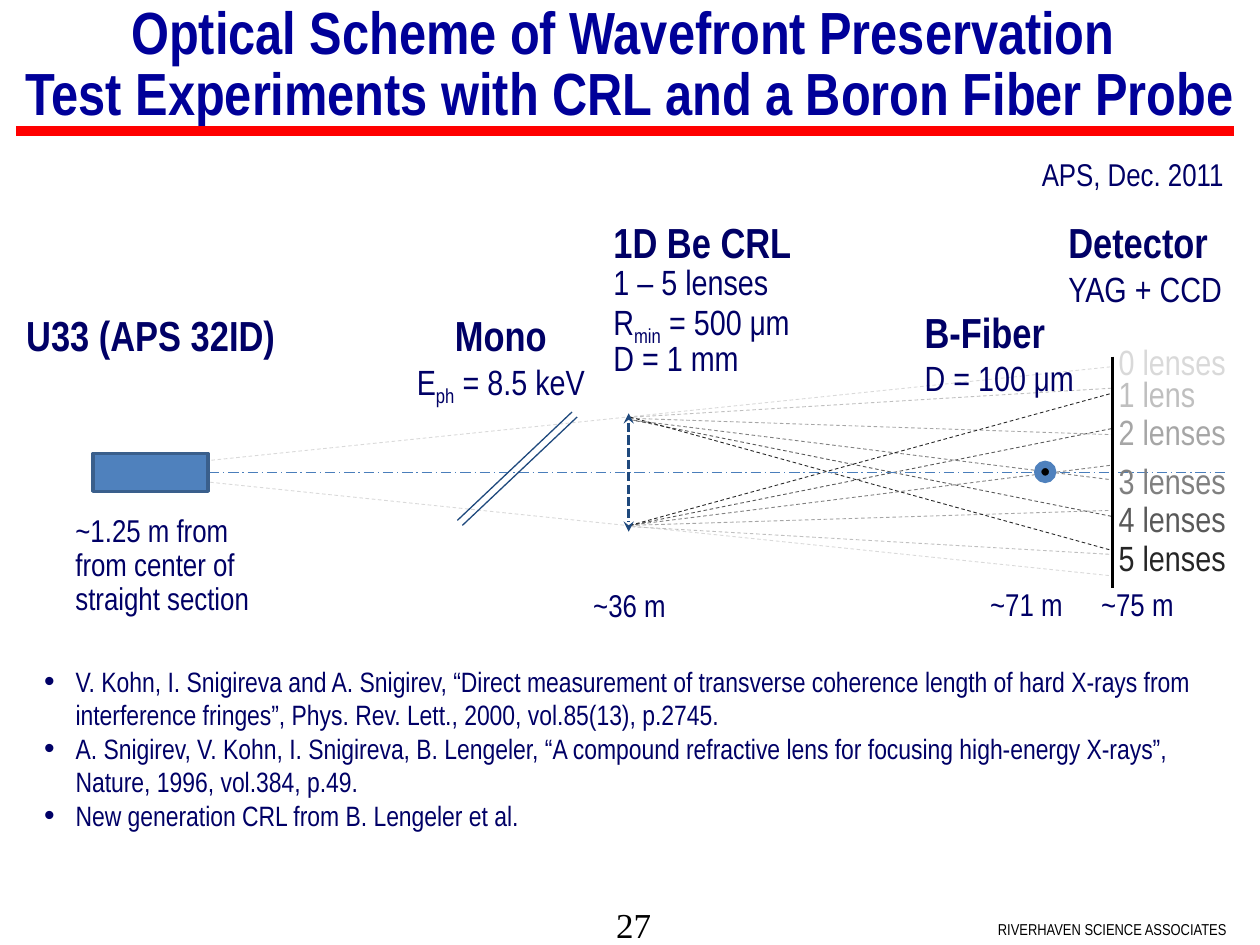
from lxml import etree
from pptx import Presentation
from pptx.dml.color import RGBColor
from pptx.enum.dml import MSO_LINE
from pptx.enum.shapes import MSO_CONNECTOR, MSO_SHAPE
from pptx.enum.text import MSO_ANCHOR, MSO_AUTO_SIZE, PP_ALIGN
from pptx.oxml.ns import qn
from pptx.util import Inches, Pt

LEFT, CENTER = PP_ALIGN.LEFT, PP_ALIGN.CENTER
DASH, AXIS_DASH, SHORT_DASH = MSO_LINE.DASH, MSO_LINE.LONG_DASH_DOT, MSO_LINE.SQUARE_DOT
RECT, OVAL = MSO_SHAPE.RECTANGLE, MSO_SHAPE.OVAL
NARROW, SERIF = "Arial Narrow", "Times New Roman"
COLORS = {"title": "000099", "text": "000066", "black": "000000", "rule": "FF0000",
          "blue": "4F81BD", "source_edge": "3A5F8C", "axis": "4A7EBB", "optics": "1F497D"}

# Content
TITLE = ["Optical Scheme of Wavefront Preservation ",
         "Test Experiments with CRL and a Boron Fiber Probe"]
REFERENCES = [
    "V. Kohn, I. Snigireva and A. Snigirev, “Direct measurement of transverse coherence "
    "length of hard X-rays from interference fringes”, Phys. Rev. Lett., 2000, vol.85(13), p.2745.",
    "A. Snigirev, V. Kohn, I. Snigireva, B. Lengeler, “A compound refractive lens for "
    "focusing high-energy X-rays”, Nature, 1996, vol.384, p.49.",
    "New generation CRL from B. Lengeler et al.",
]
# Headed labels: box, alignment, detail line spacing, heading, detail lines
# A detail line is a list of pieces; every second piece is a subscript.
COMPONENTS = [
    ((0.11, 2.41, 2.28, 0.51), LEFT, 1, "U33 (APS 32ID)", []),
    ((3.19, 2.41, 1.57, 0.84), CENTER, 1, "Mono", [["E", "ph", " = 8.5 keV"]]),
    ((4.77, 1.67, 1.64, 1.36), LEFT, 0.85, "1D Be CRL",
     [["1 – 5 lenses"], ["R", "min", " = 500 μm"], ["D = 1 mm"]]),
    ((7.24, 2.38, 1.46, 0.84), LEFT, 1, "B-Fiber", [["D = 100 μm"]]),
    ((8.38, 1.67, 1.45, 0.84), LEFT, 1, "Detector", [["YAG + CCD"]]),
]
# Plain notes: box, wrap, line spacing, lines
NOTES = [
    ((8.17, 1.18, 1.66, 0.4), False, 1, ["APS, Dec. 2011"]),
    ((0.5, 4.04, 2.01, 0.92), True, 0.9,
     ["~1.25 m from", "from center of ", "straight section"]),
    ((4.61, 4.6, 0.93, 0.4), True, 1, ["~36 m"]),
    ((7.76, 4.59, 0.87, 0.4), True, 1, ["~71 m"]),
    ((8.64, 4.59, 0.78, 0.4), False, 1, ["~75 m"]),
]
# Lens sets: label, label top, colour, ray from the upper edge, ray from the lower edge
LENS_SETS = [
    ("0 lenses", 2.65, "D9D9D9", (0.74, 3.75, 8.83, 2.91), (0.73, 3.73, 8.82, 4.57)),
    ("1 lens", 2.91, "BFBFBF", (5.03, 3.31, 8.84, 3.08), (5.01, 4.18, 8.82, 4.4)),
    ("2 lenses", 3.21, "A6A6A6", (5, 3.32, 8.84, 3.45), (5, 4.17, 8.84, 4.05)),
    ("3 lenses", 3.6, "808080", (4.98, 3.33, 8.84, 3.81), (4.99, 4.17, 8.84, 3.69)),
    ("4 lenses", 3.9, "595959", (5, 3.33, 8.83, 4.1), (5, 4.17, 8.83, 3.4)),
    ("5 lenses", 4.21, "262626", (5, 3.31, 8.83, 4.37), (5, 4.17, 8.83, 3.12)),
]
# Solids: preset, box, fill, edge
SOLIDS = [
    (RECT, (0.74, 3.6, 0.91, 0.3), "blue", "source_edge"),
    (OVAL, (8.22, 3.67, 0.15, 0.15), "blue", "blue"),
    (OVAL, (8.25, 3.7, 0.09, 0.09), "black", "blue"),
]

prs = Presentation()
prs.slide_width, prs.slide_height = Inches(10), Inches(7.5)
slide = prs.slides.add_slide(prs.slide_layouts[1])
shapes = slide.shapes


def rgb(color):
    return RGBColor.from_string(COLORS.get(color, color))


def inches(values):
    return [Inches(v) for v in values]


def add_run(paragraph, text, size, color="text", bold=False, font=NARROW):
    run = paragraph.add_run()
    run.text = text
    run.font.name, run.font.size, run.font.bold = font, Pt(size), bold
    run.font.color.rgb = rgb(color)
    return run


def add_box(box, wrap=True):
    frame = shapes.add_textbox(*inches(box)).text_frame
    frame.word_wrap = wrap
    return frame


def next_paragraph(frame, first):
    return frame.paragraphs[0] if first else frame.add_paragraph()


def add_line(ends, color, width, dash=None, arrows=False):
    line = shapes.add_connector(MSO_CONNECTOR.STRAIGHT, *inches(ends))
    line.line.color.rgb, line.line.width = rgb(color), Pt(width)
    if dash:
        line.line.dash_style = dash
    properties = line._element.spPr
    if arrows:
        for end in ("a:headEnd", "a:tailEnd"):
            etree.SubElement(properties.find(qn("a:ln")), qn(end), type="stealth")
    etree.SubElement(properties, qn("a:effectLst"))


def place(placeholder, box):
    placeholder.left, placeholder.top, placeholder.width, placeholder.height = inches(box)
    frame = placeholder.text_frame
    frame.word_wrap, frame.auto_size = True, MSO_AUTO_SIZE.NONE
    frame.vertical_anchor = MSO_ANCHOR.TOP
    return frame


# Title and rule
add_line((9.79, 1.04, 0.13, 1.04), "rule", 6)
heading = place(shapes.title, (0, 0, 10, 1.07)).paragraphs[0]
heading.alignment, heading.line_spacing = CENTER, 0.85
for i, line_text in enumerate(TITLE):
    if i:
        heading.add_line_break()
    add_run(heading, line_text, 34, "title", True)

# Rays and optical axis
for _, _, color, upper_ray, lower_ray in LENS_SETS:
    for ray in (upper_ray, lower_ray):
        add_line(ray, color, 0.5, DASH)
add_line((0.89, 3.75, 9.74, 3.75), "axis", 0.75, AXIS_DASH)

# Lens aperture, monochromator crystals and detector screen
add_line((4.99, 3.28, 4.99, 4.22), "optics", 1.75, SHORT_DASH, arrows=True)
for shift in (0, 0.04):
    add_line((4.54 + shift, 3.27 + shift, 3.63 + shift, 4.13 + shift), "optics", 0.75)
add_line((8.83, 2.83, 8.83, 4.67), "black", 1.75)

# Source and fiber
for preset, box, fill, edge in SOLIDS:
    solid = shapes.add_shape(preset, *inches(box))
    solid.shadow.inherit = False
    solid.fill.solid()
    solid.fill.fore_color.rgb = rgb(fill)
    solid.line.color.rgb, solid.line.width = rgb(edge), Pt(2)

# Component labels
for box, align, spacing, name, details in COMPONENTS:
    frame = add_box(box, wrap=False)
    frame.paragraphs[0].alignment = align
    add_run(frame.paragraphs[0], name, 24, bold=True)
    for pieces in details:
        detail = frame.add_paragraph()
        detail.alignment, detail.line_spacing = align, spacing
        for i, piece in enumerate(pieces):
            run = add_run(detail, piece, 20)
            if i % 2:
                run.font._element.set("baseline", "-25000")

# Distances and notes
for box, wrap, spacing, lines in NOTES:
    frame = add_box(box, wrap)
    for i, line_text in enumerate(lines):
        note = next_paragraph(frame, i == 0)
        note.line_spacing = spacing
        add_run(note, line_text, 18)

# Lens labels
for label, top, color, _, _ in LENS_SETS:
    add_run(add_box((8.78, top, 1.1, 0.44)).paragraphs[0], label, 20, color)

# References
frame = place(slide.placeholders[1], (0.25, 5.22, 9.75, 1.45))
for i, reference in enumerate(REFERENCES):
    entry = next_paragraph(frame, i == 0)
    properties = entry._p.get_or_add_pPr()
    properties.set("marL", str(Inches(0.25)))
    properties.set("indent", str(Inches(-0.25)))
    etree.SubElement(properties, qn("a:buSzPct"), val="108000")
    etree.SubElement(properties, qn("a:buFont"), typeface="Arial")
    etree.SubElement(properties, qn("a:buChar"), char="•")
    entry.space_before = Pt(0)
    add_run(entry, reference, 16)

# Page number and footer
page = add_box((4.89, 7.17, 0.43, 0.33))
footer = add_box((7.92, 7.25, 1.92, 0.25))
for frame in (page, footer):
    frame.margin_left = frame.margin_right = 0
page.margin_top = page.margin_bottom = 0
add_run(page.paragraphs[0], "27", 20, "black", font=SERIF)
add_run(footer.paragraphs[0], "RIVERHAVEN SCIENCE ASSOCIATES", 9, "black")

prs.save("out.pptx")
